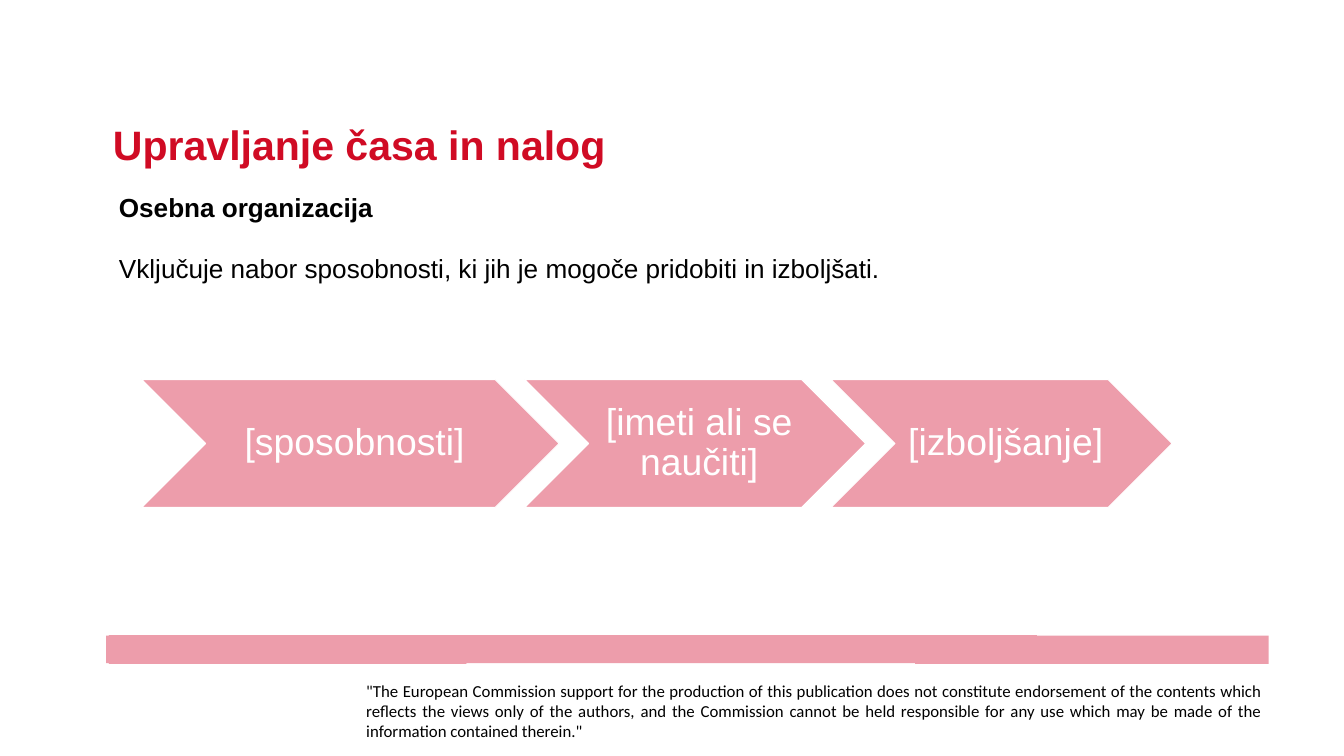
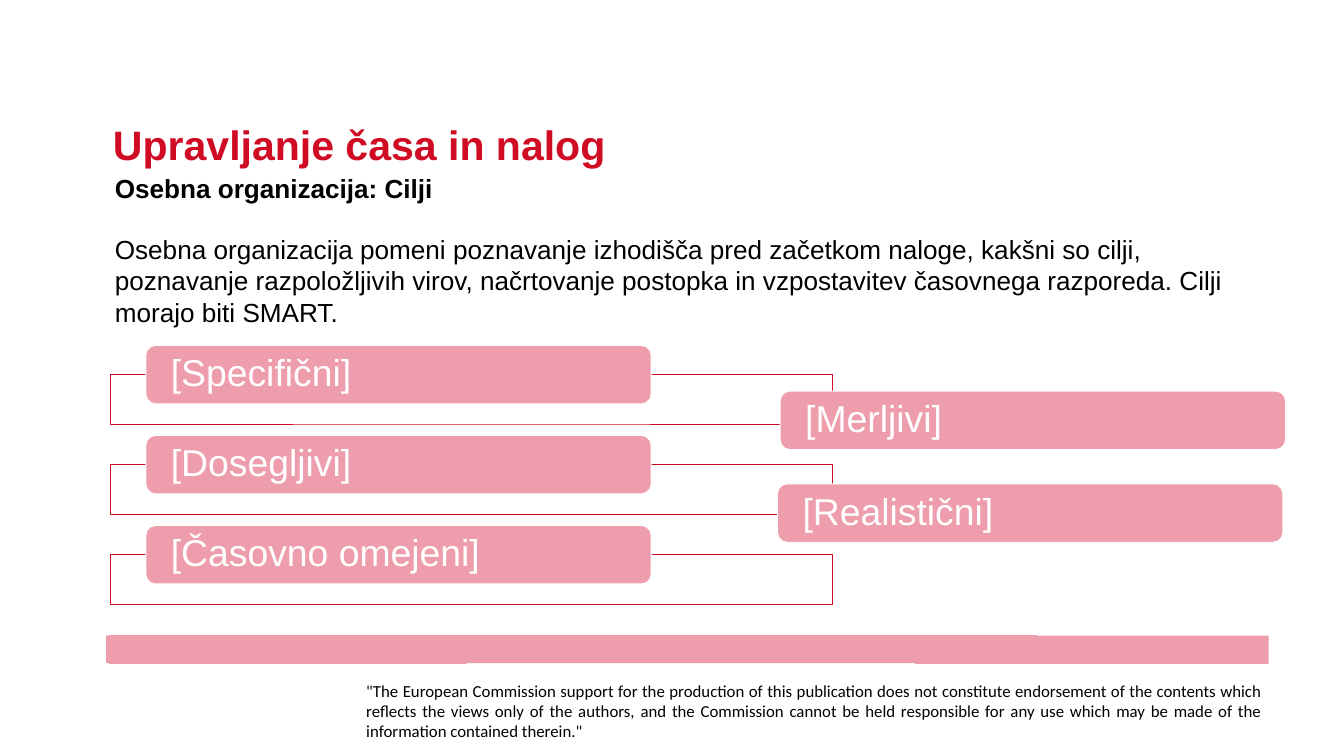
from lxml import etree
from pptx import Presentation
from pptx.dml.color import RGBColor
from pptx.enum.shapes import MSO_SHAPE
from pptx.enum.text import MSO_ANCHOR, MSO_AUTO_SIZE, PP_ALIGN
from pptx.oxml.ns import qn
from pptx.util import Pt

CHEVRON, PILL, FRAME = MSO_SHAPE.CHEVRON, MSO_SHAPE.ROUNDED_RECTANGLE, MSO_SHAPE.RECTANGLE
TOP, MIDDLE = MSO_ANCHOR.TOP, MSO_ANCHOR.MIDDLE
LEFT, CENTER, JUSTIFY = PP_ALIGN.LEFT, PP_ALIGN.CENTER, PP_ALIGN.JUSTIFY
FIXED, GROW = MSO_AUTO_SIZE.NONE, MSO_AUTO_SIZE.SHAPE_TO_FIT_TEXT

PX = 9144  # EMU in one px, 100 px to the inch
COLORS = {"red": "D00B24", "pink": "ED9DAB", "white": "FFFFFF", "black": "000000"}

# Content
TITLE = "Upravljanje časa in nalog"
DISCLAIMER = (
    '"The European Commission support for the production of this publication does not '
    "constitute endorsement of the contents which reflects the views only of the authors, "
    "and the Commission cannot be held responsible for any use which may be made of the "
    'information contained therein."'
)
SKILLS = {
    "heading": "Osebna organizacija",
    "text": "Vključuje nabor sposobnosti, ki jih je mogoče pridobiti in izboljšati.",
    "box": (167, 280, 1442, 150),
}
SKILL_STEPS = [("[sposobnosti]", 621), ("[imeti ali se naučiti]", 507), ("[izboljšanje]", 507)]
GOALS = {
    "heading": "Osebna organizacija: Cilji",
    "text": "Osebna organizacija pomeni poznavanje izhodišča pred začetkom naloge, kakšni so "
            "cilji, poznavanje razpoložljivih virov, načrtovanje postopka in vzpostavitev "
            "časovnega razporeda. Cilji morajo biti SMART.",
    "box": (161, 251, 1684, 243),
}
FRAMED_GOALS = ["[Specifični]", "[Dosegljivi]", "[Časovno omejeni]"]
SIDE_GOALS = [("[Merljivi]", 1161, 582), ("[Realistični]", 1157, 720)]

# Shared geometry and formats
TITLE_BOX = (158, 172, 964, 83)
DISCLAIMER_BOX = (545, 1015, 1333, 76)
BAND = [(1888, 946), (1543, 946), (1543, 945), (162, 945), (162, 946), (158, 946),
        (158, 987), (162, 987), (162, 988), (694, 988), (694, 987), (1362, 987),
        (1362, 988), (1888, 988)]
TEXT_INSETS = (10, 5, 10, 5)
STEP_INSETS = (18, 6, 6, 6)
PILL_INSETS = (33, 4, 28, 4)
TITLE_FONT = {"name": "Arial", "size": Pt(44), "bold": True, "color": "red"}
HEADING_FONT = {"name": "Arial", "size": Pt(28), "bold": True, "color": "black"}
BODY_FONT = {**HEADING_FONT, "bold": False}
LABEL_FONT = {"name": "Arial", "size": Pt(40), "color": "white"}
DISCLAIMER_FONT = {"name": "Calibri", "size": Pt(18), "color": "black"}


def rgb(name):
    return RGBColor.from_string(COLORS[name])


def emu(box):
    return [value * PX for value in box]


def place(shape, box):
    shape.left, shape.top, shape.width, shape.height = emu(box)


def set_frame(shape, insets, anchor=TOP, auto_size=FIXED):
    frame = shape.text_frame
    left, top, right, bottom = emu(insets)
    settings = {"word_wrap": True, "auto_size": auto_size, "vertical_anchor": anchor,
                "margin_left": left, "margin_top": top,
                "margin_right": right, "margin_bottom": bottom}
    for name, value in settings.items():
        setattr(frame, name, value)
    return frame


def write(paragraph, text, font, align=LEFT, spacing=1.0):
    paragraph.text = text
    paragraph.alignment = align
    paragraph.line_spacing = spacing
    for name, value in font.items():
        if name == "color":
            paragraph.font.color.rgb = rgb(value)
        else:
            setattr(paragraph.font, name, value)


def paint(shape, fill, line=None):
    shape.shadow.inherit = False
    shape.fill.solid()
    shape.fill.fore_color.rgb = rgb(fill)
    if line:
        shape.line.color.rgb = rgb(line)
        shape.line.width = Pt(1)
    else:
        shape.line.fill.background()


def add_label(shapes, kind, box, text, insets, align, adjustment):
    label = shapes.add_shape(kind, *emu(box))
    label.adjustments[0] = adjustment
    paint(label, "pink", "white")
    frame = set_frame(label, insets, MIDDLE)
    write(frame.paragraphs[0], text, LABEL_FONT, align, 0.9)


def add_goal(slide, text, x, y):
    add_label(slide.shapes, PILL, (x, y, 752, 87), text, PILL_INSETS, LEFT, 0.167)


def add_frame(slide, box):
    goal_frame = slide.shapes.add_shape(FRAME, *emu(box))
    paint(goal_frame, "white", "red")
    white = goal_frame.fill._xPr.find(qn("a:solidFill"))[0]
    etree.SubElement(white, qn("a:alpha"), val="90000")


def add_page(prs, content):
    slide = prs.slides.add_slide(prs.slide_layouts[1])

    # Band and disclaimer
    outline = slide.shapes.build_freeform(*BAND[0], scale=PX)
    outline.add_line_segments(BAND[1:], close=True)
    paint(outline.convert_to_shape(), "pink")
    disclaimer = slide.shapes.add_textbox(*emu(DISCLAIMER_BOX))
    frame = set_frame(disclaimer, (0, 0, 0, 0), auto_size=GROW)
    write(frame.paragraphs[0], DISCLAIMER, DISCLAIMER_FONT, JUSTIFY, 0.98)

    # Title
    title = slide.shapes.title
    place(title, TITLE_BOX)
    write(set_frame(title, TEXT_INSETS).paragraphs[0], TITLE, TITLE_FONT)

    # Heading and text
    body = slide.placeholders[1]
    place(body, content["box"])
    frame = set_frame(body, TEXT_INSETS)
    heading, text = frame.paragraphs[0], frame.add_paragraph()
    for paragraph in (heading, text):
        properties = paragraph._p.get_or_add_pPr()
        properties.set("marL", "0")
        properties.set("indent", "0")
        etree.SubElement(properties, qn("a:buNone"))
    write(heading, content["heading"], HEADING_FONT)
    write(text, content["text"], BODY_FONT)
    heading.space_before = Pt(0)
    text.space_before = Pt(32)
    return slide


def add_skills_page(prs):
    slide = add_page(prs, SKILLS)
    steps = slide.shapes.add_group_shape()
    x, overlap = 211, 51
    for text, width in SKILL_STEPS:
        add_label(steps.shapes, CHEVRON, (x, 565, width, 190), text, STEP_INSETS, CENTER, 0.5)
        x += width - overlap


def add_goals_page(prs):
    slide = add_page(prs, GOALS)
    for row, text in enumerate(FRAMED_GOALS):
        y = 514 + 134 * row
        add_frame(slide, (164, y + 43, 1075, 74))
        add_goal(slide, text, 217, y)
    for text, x, y in SIDE_GOALS:
        add_goal(slide, text, x, y)


def main():
    prs = Presentation()
    prs.slide_width, prs.slide_height = emu((2000, 1125))
    add_skills_page(prs)
    add_goals_page(prs)
    prs.save("out.pptx")


if __name__ == "__main__":
    main()
